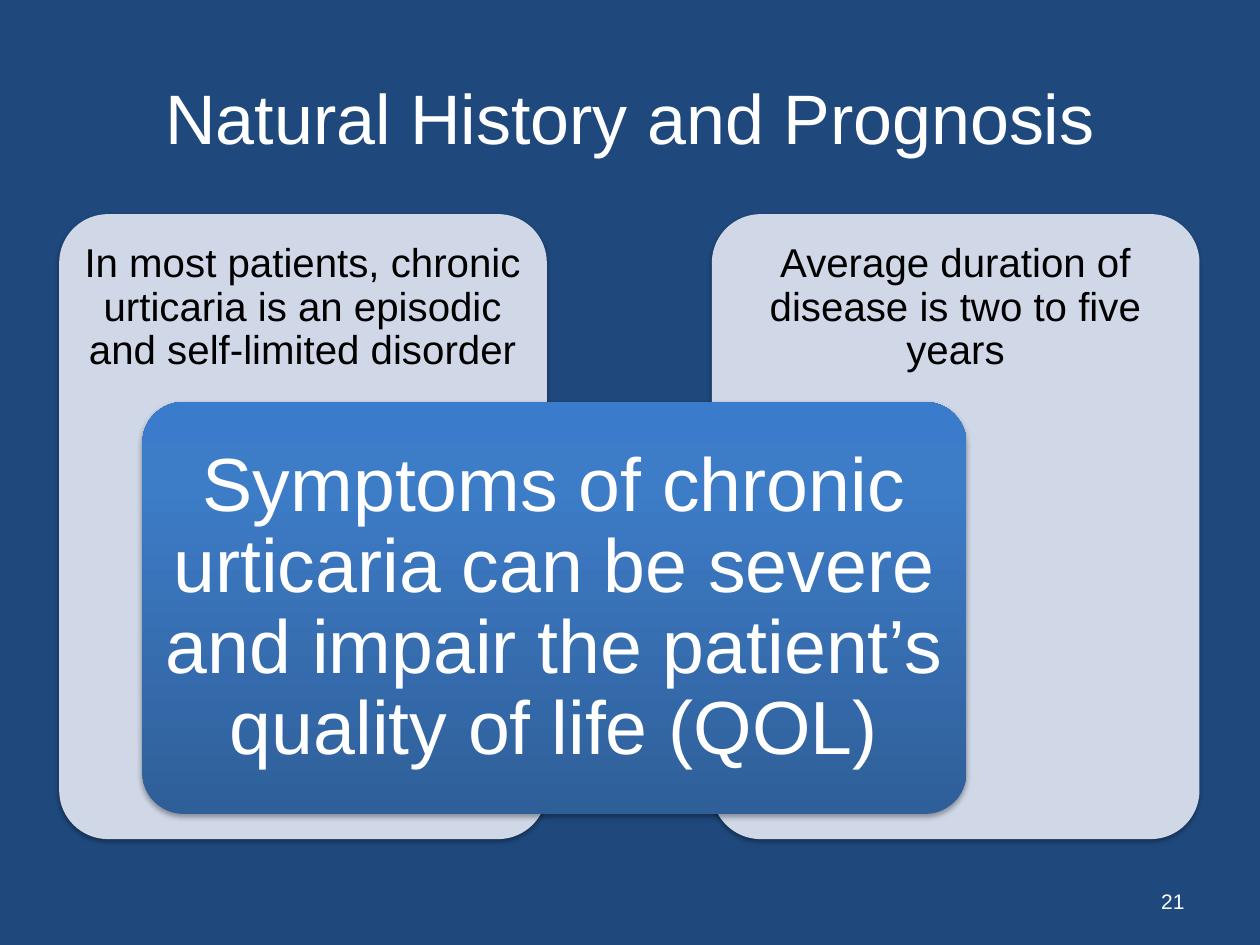
from lxml import etree
from pptx import Presentation
from pptx.dml.color import RGBColor
from pptx.enum.shapes import MSO_SHAPE as Shape
from pptx.enum.text import MSO_ANCHOR as Anchor, PP_ALIGN as Align
from pptx.oxml.ns import qn
from pptx.util import Inches, Pt


def color(hex_text):
    return RGBColor.from_string(hex_text)


def add_color(parent, hex_text, alpha=None):
    element = etree.SubElement(parent, qn("a:srgbClr"), val=hex_text)
    if alpha is not None:
        etree.SubElement(element, qn("a:alpha"), val=str(alpha * 1000))


class SlideBuilder:
    font = "Arial"
    background = "1F497D"
    light = "FFFFFF"
    dark = "000000"
    panel_fill = "D0D8E8"
    gradient = ((0, "2F5F99"), (80, "3D7CC7"), (100, "3A7CCB"))

    def __init__(self, presentation):
        self.slide = presentation.slides.add_slide(presentation.slide_layouts[6])
        fill = self.slide.background.fill
        fill.solid()
        fill.fore_color.rgb = color(self.background)

    def text(self, box, wording, size, hex_text, align=Align.CENTER,
             inset=(0.1, 0.05), spacing=1.0):
        shape = self.slide.shapes.add_textbox(*map(Inches, box))
        frame = shape.text_frame
        horizontal, vertical = map(Inches, inset)
        frame_format = {
            "word_wrap": True, "vertical_anchor": Anchor.MIDDLE,
            "margin_left": horizontal, "margin_right": horizontal,
            "margin_top": vertical, "margin_bottom": vertical,
        }
        for name, value in frame_format.items():
            setattr(frame, name, value)
        paragraph = frame.paragraphs[0]
        paragraph.alignment = align
        paragraph.line_spacing = spacing
        run = paragraph.add_run()
        run.text = wording
        for name, value in {"name": self.font, "size": Pt(size)}.items():
            setattr(run.font, name, value)
        run.font.color.rgb = color(hex_text)

    def card(self, box):
        shape = self.slide.shapes.add_shape(
            Shape.ROUNDED_RECTANGLE, *map(Inches, box))
        shape.adjustments[0] = 0.1
        shape.fill.solid()
        shape.fill.fore_color.rgb = color(self.panel_fill)
        shape.line.fill.background()
        self.shadow(shape)
        return shape

    def shadow(self, shape):
        shape.shadow.inherit = False
        effects = shape.element.spPr.find(qn("a:effectLst"))
        outer = etree.SubElement(
            effects, qn("a:outerShdw"), blurRad=str(Pt(3.1)),
            dist=str(Pt(1.8)), dir="5400000", rotWithShape="0")
        add_color(outer, self.dark, alpha=35)

    def gradient_card(self, box):
        shape = self.card(box)
        shape.fill.gradient()
        shape.fill.gradient_angle = 90
        stops = shape.element.spPr.find(qn("a:gradFill")).find(qn("a:gsLst"))
        for stop in list(stops):
            stops.remove(stop)
        for position, hex_text in self.gradient:
            stop = etree.SubElement(stops, qn("a:gs"), pos=str(position * 1000))
            add_color(stop, hex_text)


def main():
    presentation = Presentation()
    presentation.slide_width = Inches(10)
    presentation.slide_height = Inches(7.5)
    builder = SlideBuilder(presentation)

    builder.text((0.5, 0.3, 9, 1.25), "Natural History and Prognosis",
                 40, builder.light)

    panels = (
        (5.65, "Average duration of disease is two to five years"),
        (0.47, "In most patients, chronic urticaria is an episodic "
               "and self-limited disorder"),
    )
    for left, wording in panels:
        builder.card((left, 1.7, 3.87, 4.96))
        builder.text((left, 1.7, 3.87, 1.49), wording, 23, builder.dark,
                     inset=(0.18, 0.18), spacing=0.9)

    builder.gradient_card((1.13, 3.19, 6.54, 3.27))
    builder.text((1.22, 3.29, 6.35, 3.08),
                 "Symptoms of chronic urticaria can be severe and impair "
                 "the patient’s quality of life (QOL)",
                 43, builder.light, inset=(0.03, 0.03), spacing=0.9)

    builder.text((7.17, 6.95, 2.33, 0.4), "21", 12, builder.light,
                 align=Align.RIGHT)
    presentation.save("out.pptx")


if __name__ == "__main__":
    main()
